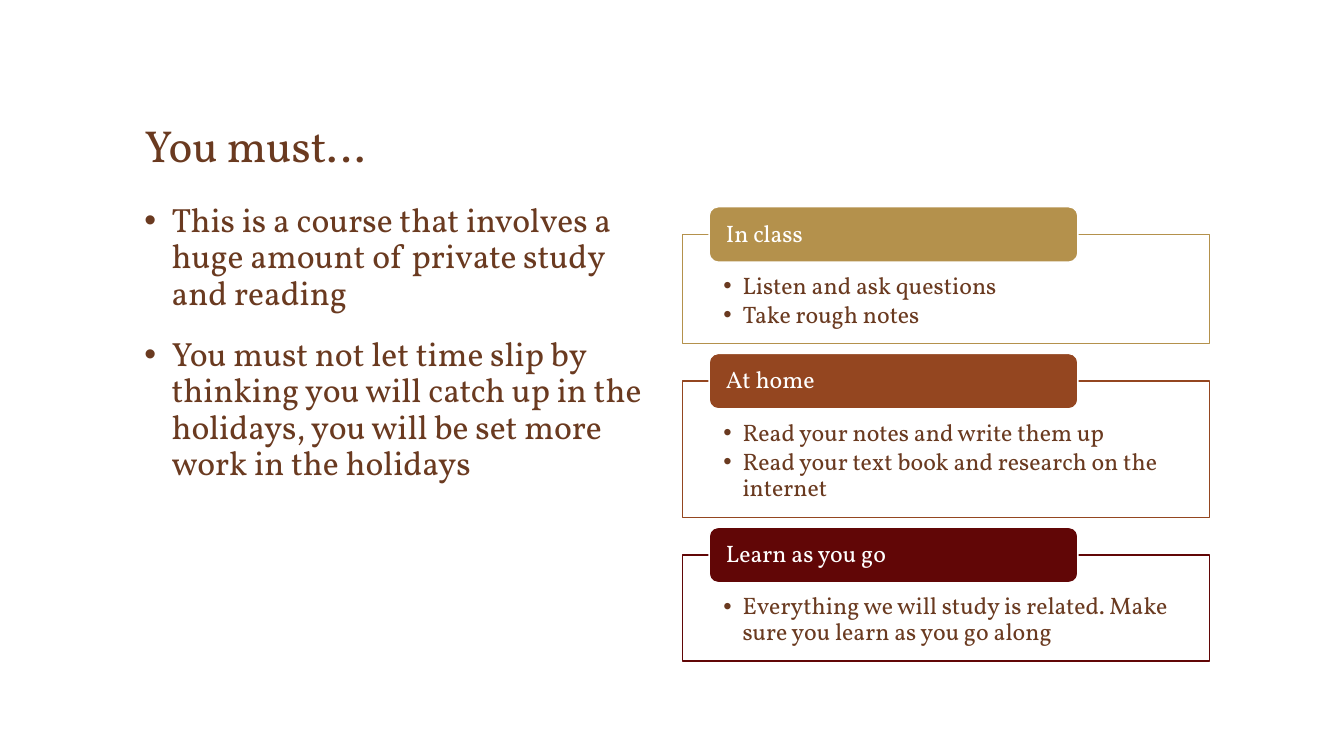
"""Build a slide with study advice on the left and three titled boxes on the right."""
from dataclasses import dataclass

from lxml import etree
from pptx import Presentation
from pptx.dml.color import RGBColor
from pptx.enum.shapes import MSO_SHAPE
from pptx.enum.text import MSO_ANCHOR, PP_ALIGN
from pptx.oxml.ns import qn
from pptx.shapes.autoshape import Shape
from pptx.slide import Slide
from pptx.util import Inches, Pt

RECT, ROUND = MSO_SHAPE.RECTANGLE, MSO_SHAPE.ROUNDED_RECTANGLE
TOP, MIDDLE, BOTTOM = MSO_ANCHOR.TOP, MSO_ANCHOR.MIDDLE, MSO_ANCHOR.BOTTOM
LEFT = PP_ALIGN.LEFT

WIDE, HIGH = 13.33, 7.5
FONT = "Vollkorn"
HEX = {
    "text": "6A3A20",
    "white": "FFFFFF",
    "gold": "B4914C",
    "rust": "944620",
    "wine": "610606",
}

EDGE, COL = 10, 39.2
RIGHT = 100 - EDGE - COL
START, GAP = 31.02, 5
TAB_HIGH = 7.33


@dataclass
class Card:
    head: str
    color: str
    high: float
    items: list[str]


CARDS = [
    Card("In class", "gold", 14.4, ["Listen and ask questions", "Take rough notes"]),
    Card("At home", "rust", 18, [
        "Read your notes and write them up",
        "Read your text book and research on the internet",
    ]),
    Card("Learn as you go", "wine", 14, [
        "Everything we will study is related. Make sure you learn as you go along",
    ]),
]
ADVICE = [
    "This is a course that involves a huge amount of private study and reading",
    "You must not let time slip by thinking you will catch up in the holidays, "
    "you will be set more work in the holidays",
]


def across(share: float) -> int:
    """Turn a percentage of the slide width into a length."""
    return Inches(WIDE * share / 100)


def down(share: float) -> int:
    """Turn a percentage of the slide height into a length."""
    return Inches(HIGH * share / 100)


def place(x: float, y: float, w: float, h: float) -> tuple[int, int, int, int]:
    """Turn shares of the slide into a left, top, width and height."""
    return across(x), down(y), across(w), down(h)


def write(shape: Shape, lines: list[str], *, size: float, color: str = "text",
          anchor: MSO_ANCHOR = TOP, pad: tuple[float, float, float] = (0.75, 0.67, 0.67),
          space: float = 0.9, before: float = 0, after: float = 0,
          indent: float = 0, level: int = 0) -> None:
    """Fill a shape with paragraphs, bulleted when an indent is given."""
    frame = shape.text_frame
    frame.word_wrap = True
    frame.vertical_anchor = anchor
    side, top, foot = pad
    frame.margin_left = frame.margin_right = across(side)
    frame.margin_top, frame.margin_bottom = down(top), down(foot)
    for rank, line in enumerate(lines):
        para = frame.add_paragraph() if rank else frame.paragraphs[0]
        para.alignment = LEFT
        para.level = level
        para.line_spacing = space
        para.space_before = Pt(before if rank else 0)
        para.space_after = Pt(after)
        if indent:
            props = para._p.get_or_add_pPr()
            props.set("marL", str(across(indent)))
            props.set("indent", str(-across(indent)))
            etree.SubElement(props, qn("a:buFont")).set("typeface", "Arial")
            etree.SubElement(props, qn("a:buChar")).set("char", "•")
        run = para.add_run()
        run.text = line
        run.font.name, run.font.size = FONT, Pt(size)
        run.font.color.rgb = RGBColor.from_string(HEX[color])


def block(slide: Slide, kind: MSO_SHAPE, box: tuple[int, int, int, int],
          fill: str, line: str, clear: int = 0) -> Shape:
    """Draw a filled and outlined shape, see-through by a given percentage."""
    shape = slide.shapes.add_shape(kind, *box)
    shape.shadow.inherit = False
    shape.fill.solid()
    shape.fill.fore_color.rgb = RGBColor.from_string(HEX[fill])
    if clear:
        tint = shape._element.spPr.find(qn("a:solidFill"))[0]
        etree.SubElement(tint, qn("a:alpha")).set("val", str((100 - clear) * 1000))
    shape.line.color.rgb = RGBColor.from_string(HEX[line])
    shape.line.width = Pt(1)
    return shape


def draw(slide: Slide, card: Card, top: float) -> None:
    """Draw one box of bullets with its heading tab over the top edge."""
    box = block(slide, RECT, place(RIGHT, top, COL, card.high), "white", card.color, 10)
    write(box, card.items, size=17, pad=(3.03, 5.2, 1.73), after=2.6, indent=1.42, level=1)
    spot = place(RIGHT + COL * 0.05, top - TAB_HIGH / 2, COL * 0.7, TAB_HIGH)
    tab = block(slide, ROUND, spot, card.color, "white")
    write(tab, [card.head], size=17, color="white", anchor=MIDDLE, pad=(1.05, 0, 0))


def main() -> None:
    """Build and save the slide."""
    deck = Presentation()
    deck.slide_width, deck.slide_height = Inches(WIDE), Inches(HIGH)
    slide = deck.slides.add_slide(deck.slide_layouts[6])
    title = slide.shapes.add_textbox(*place(EDGE, 6.27, 80, 17.07))
    write(title, ["You must…"], size=32, anchor=BOTTOM, space=1.0)
    top = START
    for card in CARDS:
        draw(slide, card, top)
        top += card.high + GAP
    body = slide.shapes.add_textbox(*place(EDGE, 26.27, COL, 62.27))
    write(body, ADVICE, size=24, before=18, indent=2.02)
    deck.save("out.pptx")


if __name__ == "__main__":
    main()
